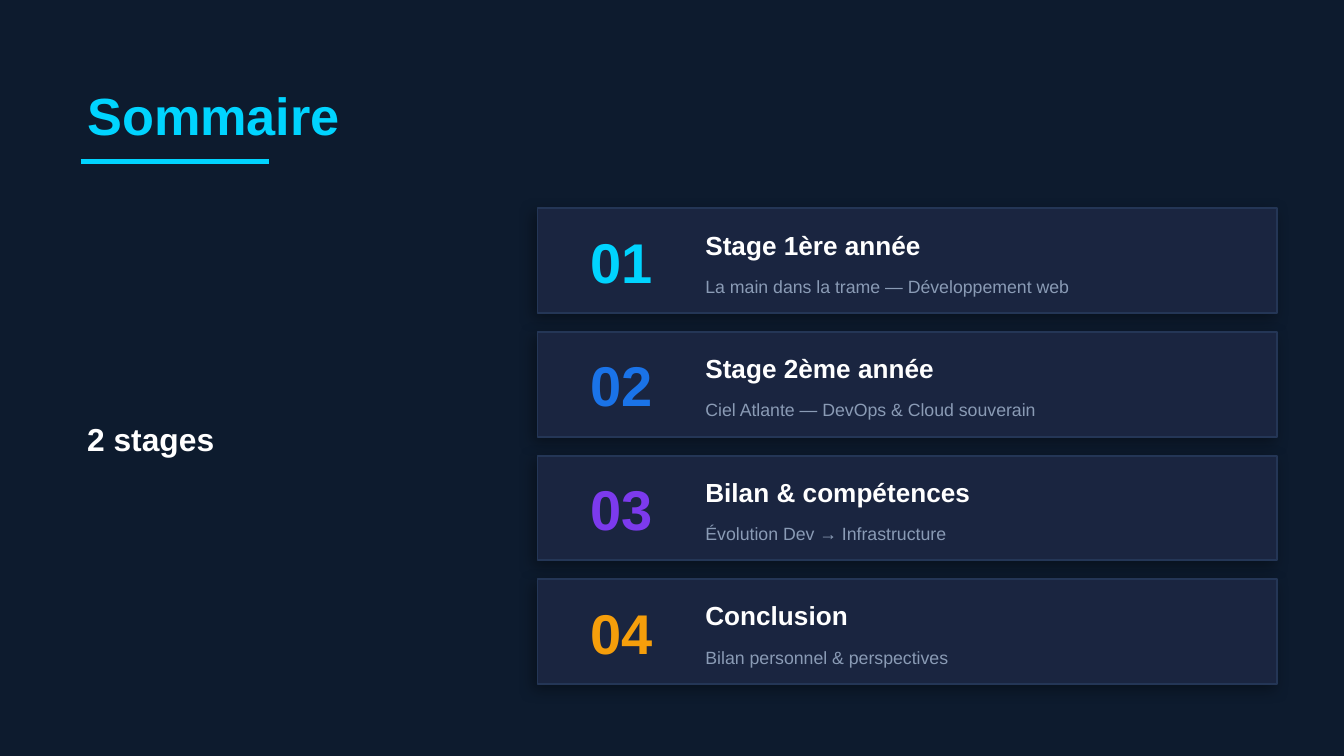
from lxml.etree import SubElement
from pptx import Presentation
from pptx.dml.color import RGBColor
from pptx.enum.shapes import MSO_CONNECTOR, MSO_SHAPE
from pptx.enum.text import MSO_ANCHOR, MSO_AUTO_SIZE, PP_ALIGN
from pptx.oxml.ns import qn
from pptx.util import Pt

EMU_PER_PX = 4572  # 200 px to the inch
COLORS = {
    "background": "0D1B2E",
    "card": "1A2540",
    "border": "243656",
    "shadow": "000000",
    "white": "FFFFFF",
    "muted": "8A9BB5",
    "cyan": "00D4FF",
    "blue": "1A73E8",
    "violet": "7C3AED",
    "amber": "F59E0B",
}
CHAPTERS = [
    ("Stage 1ère année", "La main dans la trame — Développement web", "cyan"),
    ("Stage 2ème année", "Ciel Atlante — DevOps & Cloud souverain", "blue"),
    ("Bilan & compétences", "Évolution Dev → Infrastructure", "violet"),
    ("Conclusion", "Bilan personnel & perspectives", "amber"),
]
CARD_LEFT, CARD_TOP, CARD_WIDTH, CARD_HEIGHT = 800, 310, 1100, 156
CARD_PITCH = 184


def px(length):
    return length * EMU_PER_PX


def rgb(name):
    return RGBColor.from_string(COLORS[name])


def write_text(shape, text, size, color, bold=False, align=PP_ALIGN.LEFT,
               line_spacing=None, bottom_inset=None):
    frame = shape.text_frame
    frame.word_wrap = True
    frame.auto_size = MSO_AUTO_SIZE.NONE
    frame.vertical_anchor = MSO_ANCHOR.MIDDLE
    if bottom_inset is not None:
        frame.margin_bottom = px(bottom_inset)
    paragraph = frame.paragraphs[0]
    paragraph.alignment = align
    if line_spacing:
        paragraph.line_spacing = line_spacing
    run = paragraph.add_run()
    run.text = text
    run.font.name = "Arial"
    run.font.size = Pt(size)
    run.font.bold = bold
    run.font.color.rgb = rgb(color)


class SlideBuilder:
    """Holds the current slide and draws its elements in the deck's style."""

    def __init__(self, slide):
        self.slide = slide
        slide.background.fill.solid()
        slide.background.fill.fore_color.rgb = rgb("background")

    def title(self, text, left, top, width, height):
        title = self.slide.shapes.title
        title.left, title.top = px(left), px(top)
        title.width, title.height = px(width), px(height)
        write_text(title, text, size=28, color="cyan", bold=True)

    def text(self, text, left, top, width, height, **text_format):
        box = self.slide.shapes.add_textbox(px(left), px(top), px(width), px(height))
        write_text(box, text, **text_format)

    def rule(self, left, top, width):
        line = self.slide.shapes.add_connector(
            MSO_CONNECTOR.STRAIGHT, px(left), px(top), px(left + width), px(top))
        line.line.color.rgb = rgb("cyan")
        line.line.width = Pt(2.5)
        SubElement(line._element.spPr, qn("a:effectLst"))

    def panel(self, left, top, width, height):
        panel = self.slide.shapes.add_shape(
            MSO_SHAPE.RECTANGLE, px(left), px(top), px(width), px(height))
        panel.fill.solid()
        panel.fill.fore_color.rgb = rgb("card")
        panel.line.color.rgb = rgb("border")
        panel.line.width = Pt(1)
        self.add_shadow(panel)

    def add_shadow(self, shape):
        shape.shadow.inherit = False
        effects = shape._element.spPr.find(qn("a:effectLst"))
        shadow = SubElement(effects, qn("a:outerShdw"), blurRad=str(Pt(8)),
                            dist=str(Pt(3)), dir=str(135 * 60000),
                            algn="bl", rotWithShape="0")
        color = SubElement(shadow, qn("a:srgbClr"), val=COLORS["shadow"])
        SubElement(color, qn("a:alpha"), val="35000")

    def chapter(self, number, top, heading, summary, color):
        self.panel(CARD_LEFT, top, CARD_WIDTH, CARD_HEIGHT)
        self.text(f"{number:02}", CARD_LEFT + 30, top, 190, CARD_HEIGHT,
                  size=30, color=color, bold=True, align=PP_ALIGN.CENTER)
        text_left = CARD_LEFT + 230
        self.text(heading, text_left, top + 20, 840, 68,
                  size=14, color="white", bold=True)
        self.text(summary, text_left, top + 86, 850, 60, size=9.5, color="muted")


def main():
    presentation = Presentation()
    presentation.slide_width, presentation.slide_height = px(2000), px(1125)
    title_only = presentation.slide_layouts.get_by_name("Title Only")
    builder = SlideBuilder(presentation.slides.add_slide(title_only))

    builder.title("Sommaire", 110, 110, 800, 120)
    builder.rule(120, 240, 280)
    for index, (heading, summary, color) in enumerate(CHAPTERS):
        builder.chapter(index + 1, CARD_TOP + index * CARD_PITCH,
                        heading, summary, color)
    builder.text("2 stages", 110, 500, 600, 360, size=17, color="white",
                 bold=True, line_spacing=1.1, bottom_inset=70)

    presentation.save("out.pptx")


if __name__ == "__main__":
    main()
